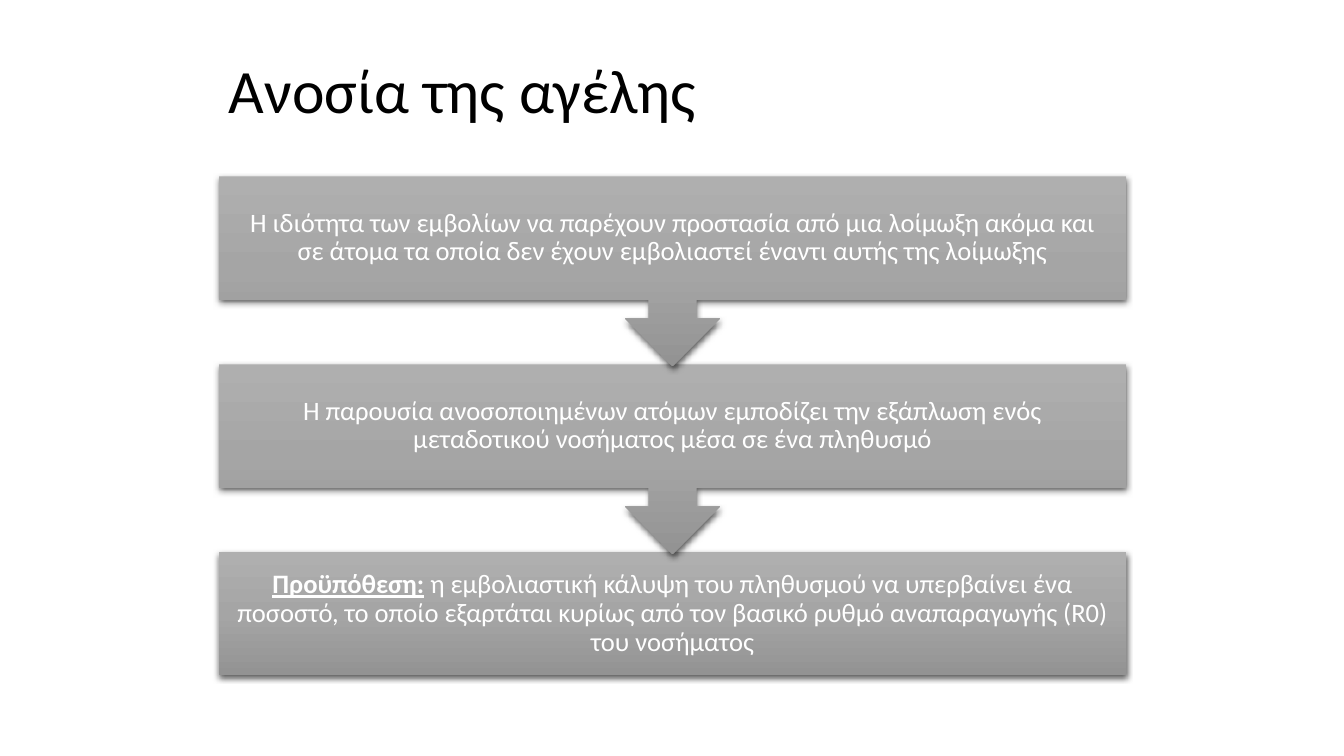
"""Build the herd immunity slide: three steps that lead down the page."""
from pptx import Presentation, util as u
from pptx.dml.color import RGBColor
from pptx.enum import shapes, text
from pptx.oxml import parse_xml
from pptx.oxml.ns import nsdecls

THEME = {
    "font": "Calibri",
    "title": u.Pt(44),
    "body": u.Pt(19),
    "ink": RGBColor.from_string("000000"),
    "light": RGBColor.from_string("FFFFFF"),
    "fade": [(0, "AFAFAF"), (50, "A5A5A5"), (100, "939393")],
    "shade": "000000",
}
LEFT, WIDTH = u.Inches(2.17), u.Inches(9)
TOP, PITCH = u.Inches(1.75), u.Inches(1.865)
BOX, CALL = u.Inches(1.22), u.Inches(1.88)
PAD = u.Inches(0.15)

STEPS = [
    ["Η ιδιότητα των εμβολίων να παρέχουν προστασία από μια λοίμωξη ακόμα και σε "
     "άτομα τα οποία δεν έχουν εμβολιαστεί έναντι αυτής της λοίμωξης"],
    ["Η παρουσία ανοσοποιημένων ατόμων εμποδίζει την εξάπλωση ενός "
     "μεταδοτικού νοσήματος μέσα σε ένα πληθυσμό"],
    ["Προϋπόθεση:",
     " η εμβολιαστική κάλυψη του πληθυσμού να υπερβαίνει ένα ποσοστό, το οποίο "
     "εξαρτάται κυρίως από τον βασικό ρυθμό αναπαραγωγής (R0) του νοσήματος"],
]


def style(run, size, color):
    """Set the font, size and colour of a run."""
    run.font.name = THEME["font"]
    run.font.size = size
    run.font.color.rgb = color


def shade(shape):
    """Give a shape the grey fade, no outline and a soft shadow."""
    shape.line.fill.background()
    stops = "".join(
        f'<a:gs pos="{pos * 1000}"><a:srgbClr val="{color}"/></a:gs>'
        for pos, color in THEME["fade"])
    props = shape._element.spPr
    props.prstGeom.addnext(parse_xml(
        f'<a:gradFill {nsdecls("a")}><a:gsLst>{stops}</a:gsLst>'
        '<a:lin ang="5400000" scaled="0"/></a:gradFill>'))
    props.append(parse_xml(
        f'<a:effectLst {nsdecls("a")}>'
        f'<a:outerShdw blurRad="{u.Pt(4.5)}" dist="{u.Pt(1.5)}" dir="5400000" '
        f'algn="ctr" rotWithShape="0"><a:srgbClr val="{THEME["shade"]}">'
        '<a:alpha val="63000"/></a:srgbClr></a:outerShdw></a:effectLst>'))


deck = Presentation()
deck.slide_width, deck.slide_height = u.Inches(13.33), u.Inches(7.5)
slide = deck.slides.add_slide(deck.slide_layouts[5])

title = slide.shapes.title
title.left, title.top = LEFT, u.Inches(0.3)
title.width, title.height = WIDTH, u.Inches(1.25)
frame = title.text_frame
frame.text = "Ανοσία της αγέλης"
frame.auto_size = text.MSO_AUTO_SIZE.NONE
frame.vertical_anchor = text.MSO_ANCHOR.MIDDLE
head = frame.paragraphs[0]
head.alignment = text.PP_ALIGN.LEFT
head.line_spacing = 0.9
style(head.runs[0], THEME["title"], THEME["ink"])

kinds = shapes.MSO_SHAPE
last = len(STEPS) - 1
for row in range(last, -1, -1):
    kind, height = ((kinds.RECTANGLE, BOX) if row == last
                    else (kinds.DOWN_ARROW_CALLOUT, CALL))
    step = slide.shapes.add_shape(kind, LEFT, TOP + row * PITCH, WIDTH, height)
    shade(step)
    frame = step.text_frame
    frame.word_wrap = True
    frame.vertical_anchor = text.MSO_ANCHOR.MIDDLE
    frame.margin_left = frame.margin_right = PAD
    frame.margin_top = frame.margin_bottom = PAD
    para = frame.paragraphs[0]
    para.alignment = text.PP_ALIGN.CENTER
    para.line_spacing = 0.9
    for words in STEPS[row]:
        run = para.add_run()
        run.text = words
        style(run, THEME["body"], THEME["light"])
    if len(para.runs) > 1:
        para.runs[0].font.bold = True
        para.runs[0].font.underline = True

deck.save("out.pptx")
